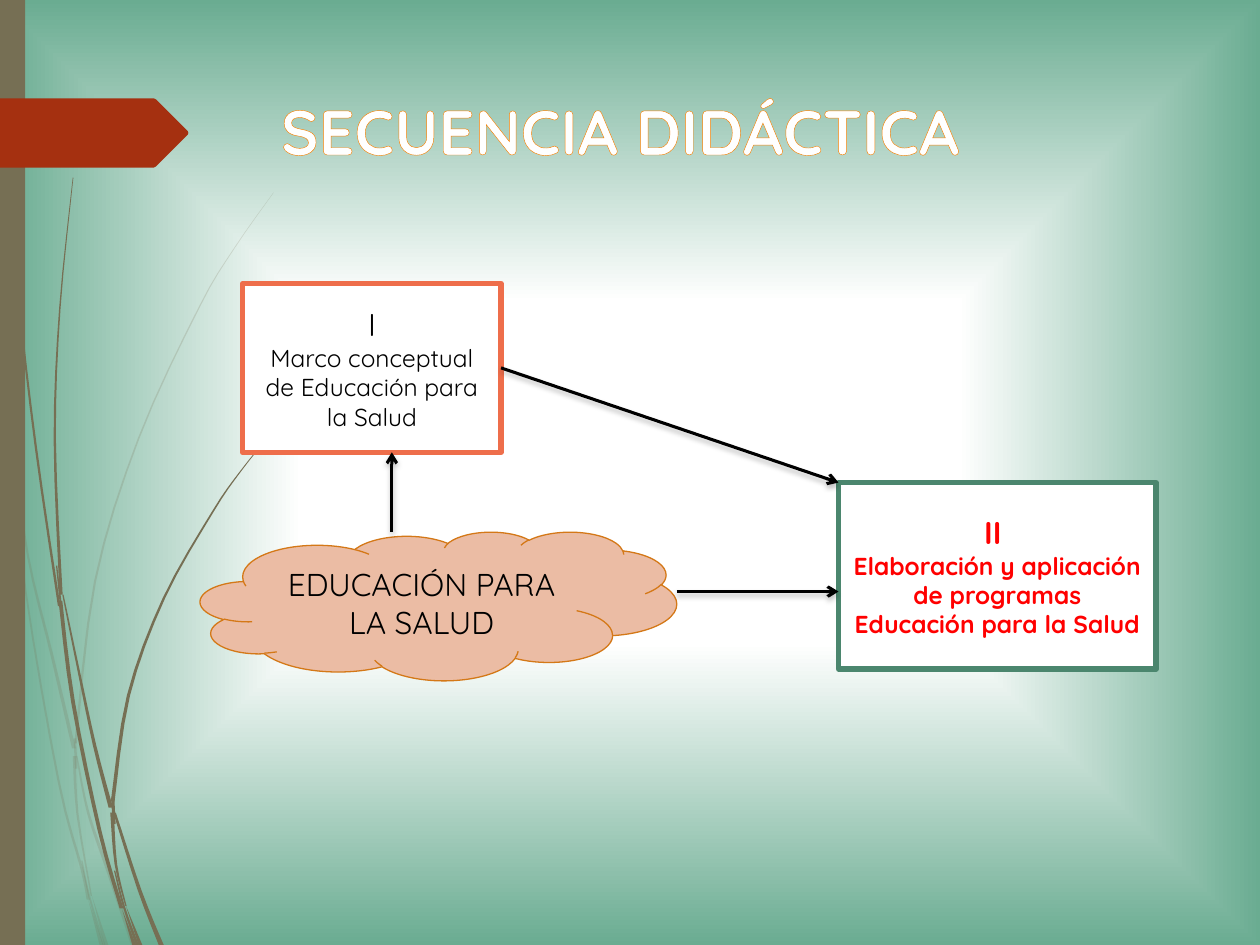
from typing import NamedTuple

from lxml.etree import SubElement
from pptx import Presentation
from pptx.dml.color import RGBColor
from pptx.enum.shapes import MSO_CONNECTOR as Connector, MSO_SHAPE as Preset
from pptx.enum.text import MSO_ANCHOR as Anchor, PP_ALIGN as Align
from pptx.oxml import parse_xml
from pptx.oxml.ns import nsdecls, qn
from pptx.util import Inches, Pt

FONT = "Quicksand"
BROWN, BLACK, WHITE, RED = "766F54", "000000", "FFFFFF", "FF0000"
COLUMNS, ROWS = 100, 75  # grid of square cells, ten to the inch
Point = tuple[float, float]


class Spot(NamedTuple):
    left: float
    top: float
    width: float
    height: float

    @property
    def right(self) -> float:
        return self.left + self.width

    @property
    def bottom(self) -> float:
        return self.top + self.height


class Line(NamedTuple):
    text: str
    size: int


class Block(NamedTuple):
    preset: Preset
    spot: Spot
    fill: str
    edge: str
    edge_width: float
    lines: list[Line]
    ink: str = BLACK
    bold: bool = False


class Arrow(NamedTuple):
    start: Point
    end: Point


class Blade(NamedTuple):
    """A piece of grass: its width at tip and root, and the points it passes through."""
    tip: float
    root: float
    points: list[Point]


FAINT_BLADES = [
    Blade(0.2, 0, [(0, 28.6), (0.75, 35)]),
    Blade(0.1, 0.3, [(1, 34.8), (2.2, 44), (4.15, 52.1), (5.87, 59.4)]),
    Blade(0.1, 0.4, [(6.1, 60), (7, 64.5), (8.65, 69.3), (10.6, 75)]),
    Blade(0, 0.3, [(7.3, 71.1), (8.45, 75)]),
    Blade(0.1, 0.25, [(0.8, 35), (2.05, 47), (4.65, 62), (6.5, 69), (7, 71.4)]),
    Blade(0.25, 0.1, [(5.9, 60), (6.15, 64.6), (7.25, 71.1)]),
    Blade(0.03, 0.2, [(21.7, 15.3), (18.6, 19.7), (15.8, 24.4), (11, 34.8), (7.55, 46.1),
                      (6, 59)]),
    Blade(0, 0.3, [(7, 71.4), (8.05, 75)]),
    Blade(0.2, 0.2, [(5.95, 58.6), (6.05, 61)]),
    Blade(0.1, 0.2, [(6.5, 68.3), (7.1, 71.2), (8.25, 75)]),
]
DARK_BLADES = [
    Blade(0.1, 0.2, [(0.25, 0), (0.55, 11), (1.45, 23.3), (2.85, 35.5), (4.7, 48.1)]),
    Blade(0.1, 0.35, [(5, 47.2), (6.2, 53), (7.5, 59.1), (8.8, 64.1)]),
    Blade(0.2, 0.4, [(9.1, 64.5), (11.1, 70.7), (12.8, 75)]),
    Blade(0.3, 0.3, [(4.8, 47.7), (5.8, 55.7), (7.9, 65.9), (9.65, 72.1)]),
    Blade(0.05, 0.25, [(5.8, 14.1), (4.75, 24.5), (4.35, 34.9), (4.85, 47.2)]),
    Blade(0, 0.3, [(10, 71.9), (11.15, 75)]),
    Blade(0.1, 0.2, [(4.5, 44.9), (5.1, 50.5)]),
    Blade(0.05, 0.3, [(21.5, 34.4), (19.1, 37.4), (16.9, 40.6), (13, 47.5), (10.2, 55.2),
                      (8.95, 63.6)]),
    Blade(0, 0.3, [(9.7, 72.2), (10.65, 75)]),
    Blade(0.3, 0.1, [(8.9, 64.5), (9.2, 68.6), (10, 71.9)]),
    Blade(0.25, 0.25, [(8.95, 63.3), (9.05, 65.4)]),
    Blade(0.1, 0.25, [(9.1, 69.1), (9.85, 72), (10.9, 75)]),
]

CLOUD = Spot(15.9, 42.2, 37.8, 11.8)
CONCEPT = Spot(19.27, 22.5, 20.5, 13.4)
PROGRAMS = Spot(66.55, 38.3, 25.2, 14.8)

BLOCKS = [
    Block(Preset.CLOUD, CLOUD, "EBBCA4", "D47817", 0.75, [Line("EDUCACIÓN PARA LA SALUD", 18)]),
    Block(Preset.RECTANGLE, CONCEPT, WHITE, "EE6E4B", 3,
          [Line("I", 18), Line("Marco conceptual de Educación para la Salud", 14)]),
    Block(Preset.RECTANGLE, PROGRAMS, WHITE, "4B866E", 3,
          [Line("II ", 18),
           Line("Elaboración y aplicación de programas Educación para la Salud", 14)],
          RED, True),
]

ARROWS = [
    Arrow((CLOUD.right, 46.95), (PROGRAMS.left, 46.95)),
    Arrow((31.1, CLOUD.top), (31.1, CONCEPT.bottom)),
    Arrow((CONCEPT.right, 29.2), (PROGRAMS.left, PROGRAMS.top)),
]


def cells(*counts: float) -> list[int]:
    return [Inches(count / 10) for count in counts]


def color(code: str) -> RGBColor:
    return RGBColor.from_string(code)


def paint(shape, fill: str, edge: str | None = None, width: float = 1) -> None:
    shape.shadow.inherit = False
    shape.fill.solid()
    shape.fill.fore_color.rgb = color(fill)
    if edge:
        shape.line.color.rgb = color(edge)
        shape.line.width = Pt(width)
    else:
        shape.line.fill.background()


def write(para, text: str, *, size: int, ink: str, bold: bool = False, align=Align.CENTER):
    para.alignment = align
    span = para.add_run()
    span.text = text
    span.font.name, span.font.size, span.font.bold = FONT, Pt(size), bold
    span.font.color.rgb = color(ink)
    return span


def set_background(page) -> None:
    page.background.fill.solid()
    holder = page.element.find(".//" + qn("p:bgPr"))
    stops = "".join(f'<a:gs pos="{share * 1000}"><a:srgbClr val="{code}"/></a:gs>'
                    for share, code in [(0, WHITE), (36, WHITE), (100, "6AAC91")])
    holder.replace(holder[0], parse_xml(
        f'<a:gradFill {nsdecls("a")} rotWithShape="1"><a:gsLst>{stops}</a:gsLst>'
        '<a:path path="rect"><a:fillToRect l="50000" t="50000" r="50000" b="50000"/>'
        '</a:path></a:gradFill>'))


def add_outline(page, points: list[Point], fill: str):
    corners = [tuple(cells(*point)) for point in points]
    builder = page.shapes.build_freeform(*corners[0])
    builder.add_line_segments(corners[1:])
    shape = builder.convert_to_shape()
    paint(shape, fill)
    return shape


def smooth(points: list[Point], steps: int = 4) -> list[Point]:
    """Catmull-Rom curve through the points; two points stay a straight line."""
    if len(points) == 2:
        return points
    padded = [points[0], *points, points[-1]]
    curve = []
    for corners in zip(padded, padded[1:], padded[2:], padded[3:]):
        for t in (step / steps for step in range(steps)):
            curve.append(tuple(
                q + t * (r - p + t * (2 * p - 5 * q + 4 * r - s + t * (3 * (q - r) + s - p))) / 2
                for p, q, r, s in zip(*corners)))
    return curve + [points[-1]]


def add_blade(page, blade: Blade, opacity: int = 100) -> None:
    curve = smooth(blade.points)
    growth = (blade.root - blade.tip) / (len(curve) - 1)
    halves = [(blade.tip + growth * i) / 2 for i in range(len(curve))]
    near = [(x - half, y) for (x, y), half in zip(curve, halves)]
    far = [(x + half, y) for (x, y), half in zip(curve, halves)]
    shape = add_outline(page, near + far[::-1], BROWN)
    tint = shape._element.spPr.find(".//" + qn("a:srgbClr"))
    SubElement(tint, qn("a:alpha"), val=str(opacity * 1000))


def add_title(page, text: str) -> None:
    title = page.shapes.title
    title.left, title.top, title.width, title.height = cells(21.3, 6.8, 72.1, 7.8)
    title.text_frame.vertical_anchor = Anchor.TOP
    span = write(title.text_frame.paragraphs[0], text, size=36, ink=WHITE, bold=True,
                 align=Align.LEFT)
    span.font._element.insert(0, parse_xml(
        f'<a:ln {nsdecls("a")} w="{Pt(1.42)}"><a:solidFill><a:srgbClr val="F67F00"/>'
        '</a:solidFill></a:ln>'))


def add_block(page, block: Block) -> None:
    box = page.shapes.add_shape(block.preset, *cells(*block.spot))
    paint(box, block.fill, block.edge, block.edge_width)
    frame = box.text_frame
    frame.word_wrap, frame.vertical_anchor = True, Anchor.MIDDLE
    for index, line in enumerate(block.lines):
        para = frame.add_paragraph() if index else frame.paragraphs[0]
        write(para, line.text, size=line.size, ink=block.ink, bold=block.bold)


def add_arrow(page, arrow: Arrow) -> None:
    link = page.shapes.add_connector(Connector.STRAIGHT, *cells(*arrow.start, *arrow.end))
    link.line.color.rgb = color(BLACK)
    link.line.width = Pt(1.75)
    SubElement(link.line._get_or_add_ln(), qn("a:tailEnd"), type="arrow")
    link._element.spPr.append(parse_xml(
        f'<a:effectLst {nsdecls("a")}><a:outerShdw blurRad="{Pt(3)}" dist="{Pt(2)}" '
        f'dir="5400000" rotWithShape="0"><a:srgbClr val="{BLACK}"><a:alpha val="25000"/>'
        '</a:srgbClr></a:outerShdw></a:effectLst>'))


def main() -> None:
    deck = Presentation()
    deck.slide_width, deck.slide_height = cells(COLUMNS, ROWS)
    page = deck.slides.add_slide(deck.slide_layouts.get_by_name("Title Only"))
    set_background(page)
    for blades, opacity in [(FAINT_BLADES, 20), (DARK_BLADES, 100)]:
        for blade in blades:
            add_blade(page, blade, opacity)
    bar = page.shapes.add_shape(Preset.RECTANGLE, *cells(0, 0, 2, ROWS))
    paint(bar, BROWN)
    add_outline(page, [(0, 7.8), (12.2, 7.8), (12.4, 7.9), (14.9, 10.4), (14.95, 10.55),
                       (14.9, 10.7), (12.4, 13.2), (12.2, 13.3), (0, 13.3)], "A53010")
    add_title(page, "SECUENCIA DIDÁCTICA")
    for block in BLOCKS:
        add_block(page, block)
    for arrow in ARROWS:
        add_arrow(page, arrow)
    deck.save("out.pptx")


if __name__ == "__main__":
    main()
